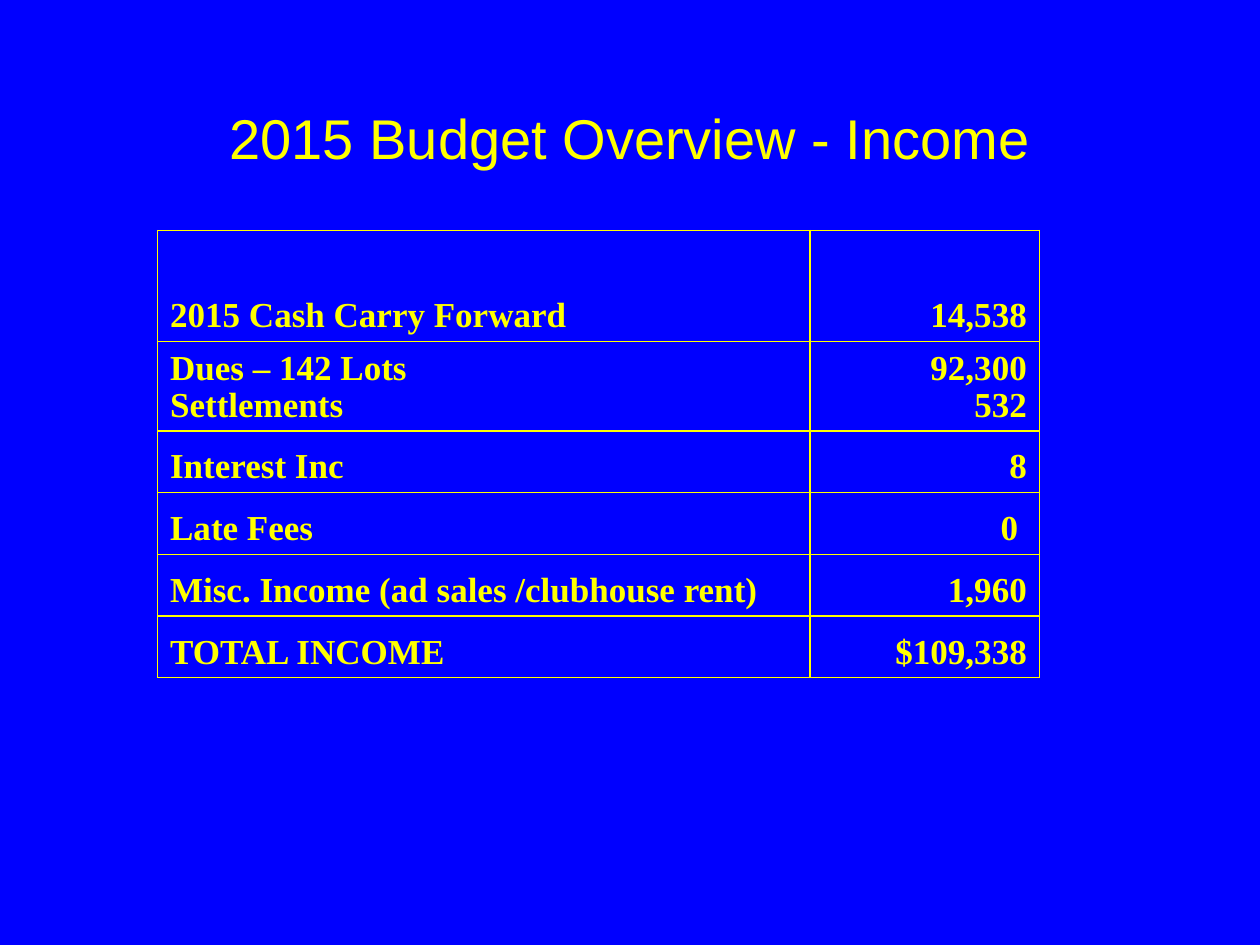
from dataclasses import dataclass

from lxml import etree
from pptx import Presentation
from pptx.dml.color import RGBColor
from pptx.enum.text import MSO_ANCHOR, PP_ALIGN
from pptx.oxml.ns import qn
from pptx.util import Emu, Inches, Pt

LEFT, CENTER, RIGHT = PP_ALIGN.LEFT, PP_ALIGN.CENTER, PP_ALIGN.RIGHT
MIDDLE, BOTTOM = MSO_ANCHOR.MIDDLE, MSO_ANCHOR.BOTTOM
TITLE_ONLY = 5
HANGING = Inches(0.38)


@dataclass(frozen=True)
class Theme:
    background: str = "0000FF"
    ink: str = "FFFF00"
    title_font: str = "Arial"
    body_font: str = "Times New Roman"
    title_size: int = 32
    body_size: int = 20
    border_width: int = 1
    line_spacing: float = 0.95


INCOME_LINES = [
    (["2015 Cash Carry Forward"], ["14,538"]),
    (["Dues – 142 Lots", "Settlements"], ["92,300", "532"]),
    (["Interest Inc"], ["8"]),
    (["Late Fees"], ["0 "]),
    (["Misc. Income (ad sales /clubhouse rent)"], ["1,960"]),
    (["TOTAL INCOME"], ["$109,338"]),
]


class SlideBuilder:
    """Holds the theme and the current slide; places content by shares of it."""

    def __init__(self, deck, theme):
        self.theme = theme
        self.width, self.height = deck.slide_width, deck.slide_height
        self.slide = deck.slides.add_slide(deck.slide_layouts[TITLE_ONLY])
        fill = self.slide.background.fill
        fill.solid()
        fill.fore_color.rgb = RGBColor.from_string(theme.background)

    def box(self, left, top, width, height):
        """Turn shares of the slide into lengths."""
        return {
            "left": Emu(round(left * self.width)),
            "top": Emu(round(top * self.height)),
            "width": Emu(round(width * self.width)),
            "height": Emu(round(height * self.height)),
        }

    def add_text(self, paragraph, text, font, size, bold, align):
        paragraph.alignment = align
        run = paragraph.add_run()
        run.text = text
        for name, value in {"name": font, "size": Pt(size), "bold": bold}.items():
            setattr(run.font, name, value)
        run.font.color.rgb = RGBColor.from_string(self.theme.ink)

    def title(self, text, *shares):
        heading = self.slide.shapes.title
        for name, value in self.box(*shares).items():
            setattr(heading, name, value)
        frame = heading.text_frame
        frame.vertical_anchor = MIDDLE
        self.add_text(frame.paragraphs[0], text, self.theme.title_font,
                      self.theme.title_size, False, CENTER)

    def table(self, lines, column_shares, row_shares, left, top):
        """Column and row shares are of the slide's width and height."""
        bounds = self.box(left, top, sum(column_shares), sum(row_shares))
        table = self.slide.shapes.add_table(
            len(row_shares), len(column_shares), **bounds).table
        table.first_row = table.horz_banding = False
        for column, share in zip(table.columns, column_shares):
            column.width = Emu(round(share * self.width))
        for row, share in zip(table.rows, row_shares):
            row.height = Emu(round(share * self.height))
        for row, entries in zip(table.rows, lines):
            for cell, texts, align in zip(row.cells, entries, (LEFT, RIGHT)):
                self.cell(cell, texts, align)

    def cell(self, cell, texts, align):
        cell.vertical_anchor = BOTTOM
        self.borders(cell)
        cell.fill.background()
        frame = cell.text_frame
        for index, text in enumerate(texts):
            paragraph = frame.add_paragraph() if index else frame.paragraphs[0]
            self.add_text(paragraph, text, self.theme.body_font,
                          self.theme.body_size, True, align)
            paragraph.line_spacing = self.theme.line_spacing
            properties = paragraph._p.get_or_add_pPr()
            properties.set("marL", str(HANGING))
            properties.set("indent", str(-HANGING))

    def borders(self, cell):
        properties = cell._tc.get_or_add_tcPr()
        for side in ("a:lnL", "a:lnR", "a:lnT", "a:lnB"):
            line = etree.SubElement(properties, qn(side),
                                    w=str(Pt(self.theme.border_width)))
            solid = etree.SubElement(line, qn("a:solidFill"))
            etree.SubElement(solid, qn("a:srgbClr"), val=self.theme.ink)


def main():
    deck = Presentation()
    deck.slide_width, deck.slide_height = Inches(10), Inches(7.5)
    builder = SlideBuilder(deck, Theme())
    builder.title("2015 Budget Overview - Income", 0.075, 0.09, 0.85, 0.11)
    row_heights = [0.88, 0.71] + [0.49] * 4
    builder.table(INCOME_LINES, [0.518, 0.182],
                  [height / 7.5 for height in row_heights], 0.125, 1.83 / 7.5)
    deck.save("out.pptx")


if __name__ == "__main__":
    main()
